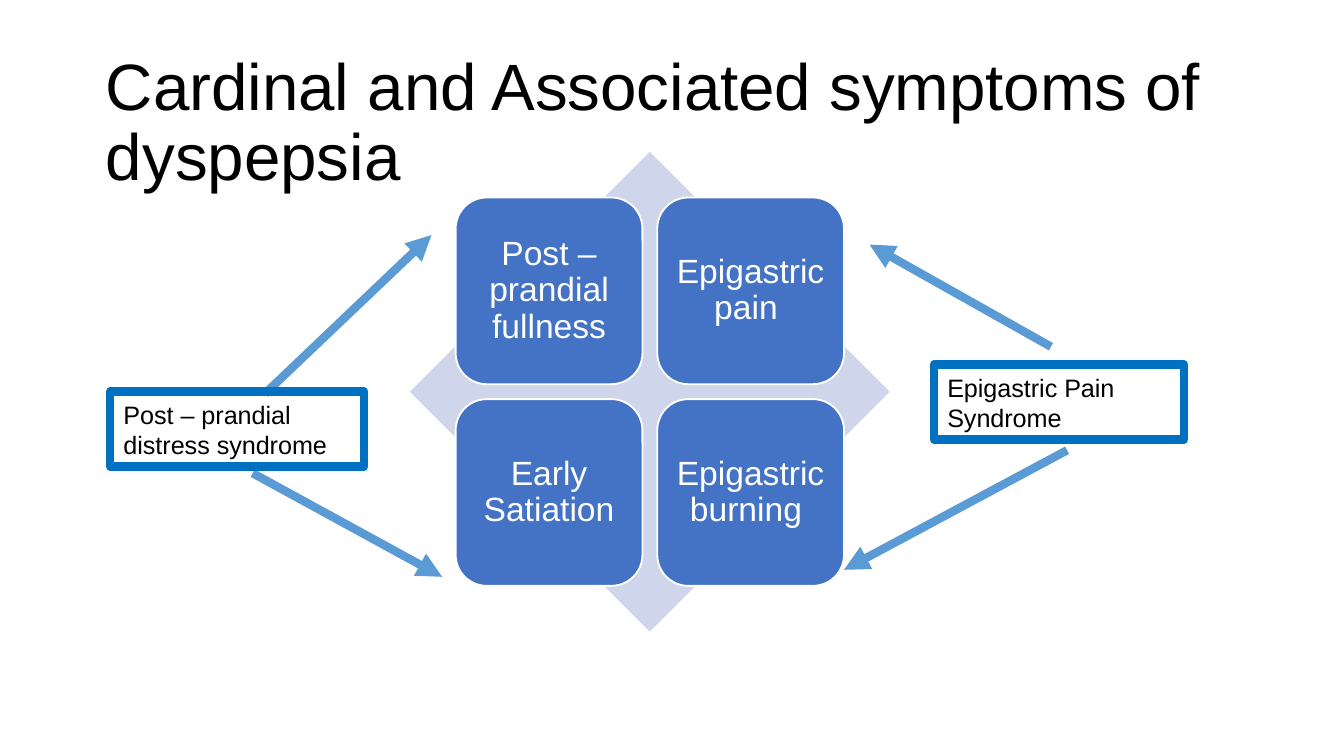
from dataclasses import dataclass
from lxml.etree import SubElement
from pptx import Presentation
from pptx.dml.color import RGBColor
from pptx.enum.shapes import MSO_CONNECTOR, MSO_SHAPE
from pptx.enum.text import MSO_ANCHOR, PP_ALIGN
from pptx.oxml.ns import qn
from pptx.util import Inches, Pt

WIDTH = 10
HEIGHT = WIDTH * 9 / 16
BLACK, WHITE = "000000", "FFFFFF"
TILE, DIAMOND, FRAME, ARROW = "4472C4", "CFD5EA", "0070C0", "5B9BD5"


@dataclass(frozen=True)
class Box:
    """A rectangle in percent of the slide's width and height."""
    left: float
    top: float
    width: float
    height: float

    def emu(self):
        """Return the rectangle as slide lengths."""
        return across(self.left), down(self.top), across(self.width), down(self.height)


@dataclass(frozen=True)
class Syndrome:
    """A framed label and the arrows from it to its symptoms."""
    text: str
    box: Box
    arrows: tuple


TITLE = Box(6.9, 8.15, 86.2, 16.55)
BACKDROP = Box(30.5, 20.09, 35.7, 63.47)
FIRST_TILE = Box(33.9, 26.13, 13.9, 24.71)
COLUMN_STEP, ROW_STEP = 15, 26.67
SYMPTOMS = (
    ("Post – prandial fullness", "Epigastric pain "),
    ("Early Satiation", "Epigastric burning "),
)
SYNDROMES = (
    Syndrome("Post – prandial distress syndrome ", Box(8.2, 51.78, 18.9, 9.96),
             ((18.8, 62.6, 32.9, 76.3), (19.7, 52.1, 32.1, 31.11))),
    Syndrome("Epigastric Pain Syndrome ", Box(69.5, 48.2, 18.6, 9.96),
             ((78.2, 45.87, 64.7, 32.36), (79.4, 59.56, 62.8, 75.38))),
)


def across(percent: float):
    """Turn a share of the slide's width into a length."""
    return Inches(WIDTH * percent / 100)


def down(percent: float):
    """Turn a share of the slide's height into a length."""
    return Inches(HEIGHT * percent / 100)


def color(value: str) -> RGBColor:
    """Turn a hex string into a colour."""
    return RGBColor.from_string(value)


def write(sp, text: str, *, size: float, ink=BLACK, align=PP_ALIGN.LEFT,
          spacing=1.0, inset=None):
    """Put one formatted paragraph into a shape."""
    tf = sp.text_frame
    tf.word_wrap = True
    tf.vertical_anchor = MSO_ANCHOR.MIDDLE
    if inset is not None:
        tf.margin_left = tf.margin_right = Inches(inset)
        tf.margin_top = tf.margin_bottom = Inches(inset)
    p = tf.paragraphs[0]
    p.alignment, p.line_spacing = align, spacing
    r = p.add_run()
    r.text = text
    r.font.name, r.font.size = "Arial", Pt(size)
    r.font.color.rgb = color(ink)


def add_shape(s, kind, box: Box, *, fill=None, line=None, weight=1.0):
    """Draw a preset shape with an optional fill and outline."""
    sp = s.shapes.add_shape(kind, *box.emu())
    sp.shadow.inherit = False
    if fill:
        sp.fill.solid()
        sp.fill.fore_color.rgb = color(fill)
    else:
        sp.fill.background()
    if line:
        sp.line.color.rgb = color(line)
        sp.line.width = Pt(weight)
    else:
        sp.line.fill.background()
    return sp


def add_arrow(s, x1: float, y1: float, x2: float, y2: float):
    """Draw an arrow that points at its second end."""
    c = s.shapes.add_connector(MSO_CONNECTOR.STRAIGHT, across(x1), down(y1),
                               across(x2), down(y2))
    c.line.color.rgb = color(ARROW)
    c.line.width = Pt(4.5)
    properties = c._element.spPr
    SubElement(properties.find(qn("a:ln")), qn("a:tailEnd"), type="triangle")
    SubElement(properties, qn("a:effectLst"))


def add_symptoms(s):
    """Draw the grid of symptom tiles over its diamond."""
    add_shape(s, MSO_SHAPE.DIAMOND, BACKDROP, fill=DIAMOND)
    for row, texts in enumerate(SYMPTOMS):
        for col, text in enumerate(texts):
            box = Box(FIRST_TILE.left + col * COLUMN_STEP,
                      FIRST_TILE.top + row * ROW_STEP,
                      FIRST_TILE.width, FIRST_TILE.height)
            sp = add_shape(s, MSO_SHAPE.ROUNDED_RECTANGLE, box, fill=TILE, line=WHITE)
            write(sp, text, size=18, ink=WHITE, align=PP_ALIGN.CENTER,
                  spacing=0.9, inset=0.07)


def add_syndrome(s, syndrome: Syndrome):
    """Draw a syndrome's arrows and its framed label."""
    for ends in syndrome.arrows:
        add_arrow(s, *ends)
    sp = add_shape(s, MSO_SHAPE.RECTANGLE, syndrome.box, line=FRAME, weight=4.5)
    write(sp, syndrome.text, size=13.5)


def main():
    """Build and save the slide."""
    prs = Presentation()
    prs.slide_width, prs.slide_height = Inches(WIDTH), Inches(HEIGHT)
    s = prs.slides.add_slide(prs.slide_layouts[6])
    title = s.shapes.add_textbox(*TITLE.emu())
    write(title, "Cardinal and Associated symptoms of dyspepsia ", size=35.1, spacing=0.9)
    add_symptoms(s)
    for syndrome in SYNDROMES:
        add_syndrome(s, syndrome)
    prs.save("out.pptx")


if __name__ == "__main__":
    main()
